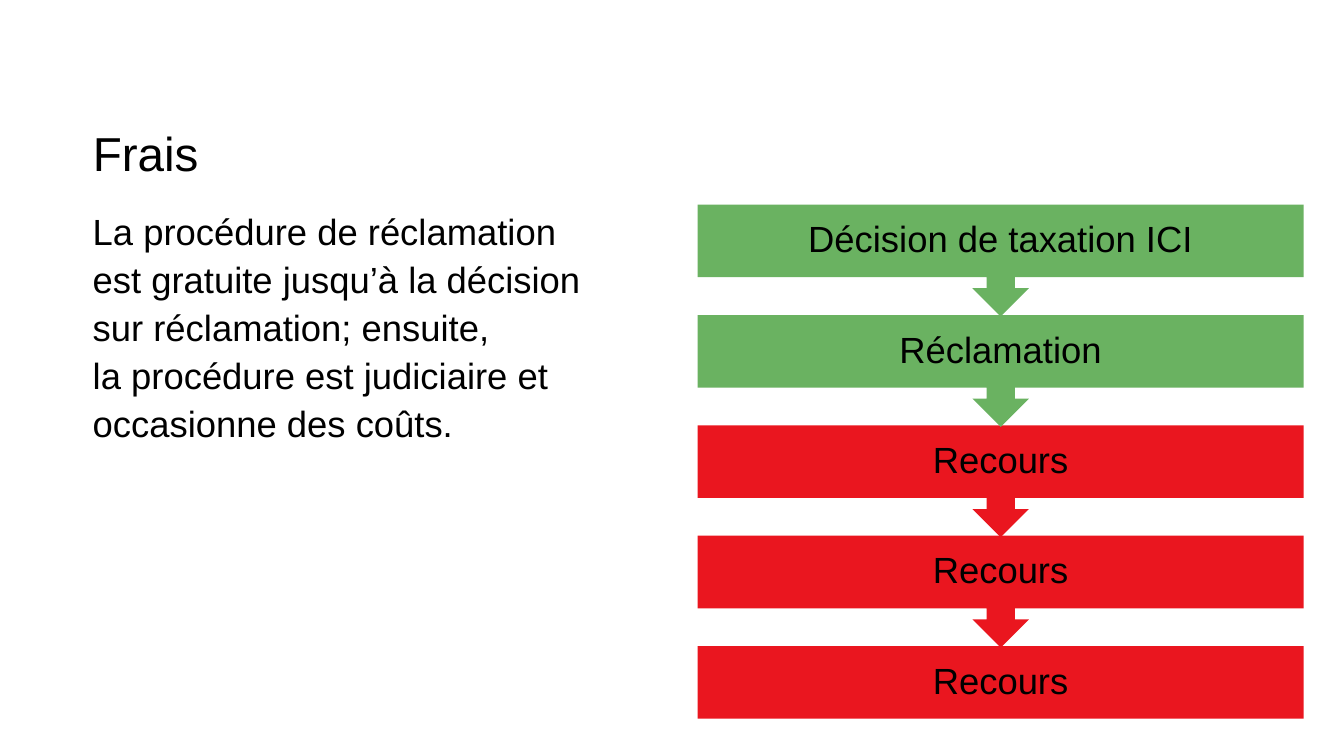
from pptx import Presentation
from pptx.dml.color import RGBColor
from pptx.enum.shapes import MSO_SHAPE
from pptx.enum.text import MSO_ANCHOR, PP_ALIGN
from pptx.util import Inches, Pt

RECTANGLE = MSO_SHAPE.RECTANGLE
TOP, MIDDLE = MSO_ANCHOR.TOP, MSO_ANCHOR.MIDDLE
LEFT, CENTER = PP_ALIGN.LEFT, PP_ALIGN.CENTER

COLORS = {"text": "000000", "free": "6AB261", "charged": "EA161F"}
FONT = "Arial"

STEPS = [
    ("Décision de taxation ICI", "free"),
    ("Réclamation", "free"),
    ("Recours", "charged"),
    ("Recours", "charged"),
    ("Recours", "charged"),
]
STEP_LEFT, STEP_WIDTH, BAR_HEIGHT = 6.92, 6.01, 0.72
FIRST_TOP, LAST_TOP = 2.03, 6.41
PITCH = (LAST_TOP - FIRST_TOP) / (len(STEPS) - 1)
ARROW_HEIGHT, NECK_HEIGHT = 0.39, 0.11
NECK_HALF, HEAD_HALF = 0.14, 0.28
STEP_INSET = 0.2


def write_text(shape, text, size, align, anchor, line_spacing, insets):
    """Fill the shape with one paragraph; insets are left, top, right, bottom."""
    frame = shape.text_frame
    frame.word_wrap = True
    frame.vertical_anchor = anchor
    (frame.margin_left, frame.margin_top,
     frame.margin_right, frame.margin_bottom) = map(Inches, insets)
    paragraph = frame.paragraphs[0]
    paragraph.text = text
    paragraph.alignment = align
    paragraph.line_spacing = line_spacing
    for run in paragraph.runs:
        run.font.name = FONT
        run.font.size = Pt(size)
        run.font.color.rgb = RGBColor.from_string(COLORS["text"])


def add_text(slide, box, text, size, anchor, line_spacing):
    shape = slide.shapes.add_textbox(*map(Inches, box))
    write_text(shape, text, size, LEFT, anchor, line_spacing, (0, 0, 0, 0))


def build_arrow_bar(slide, top):
    """Draw a bar with a downward arrow under its middle."""
    right = STEP_LEFT + STEP_WIDTH
    center = STEP_LEFT + STEP_WIDTH / 2
    bottom = top + BAR_HEIGHT
    shoulder = bottom + NECK_HEIGHT
    outline = [
        (STEP_LEFT, top), (right, top), (right, bottom),
        (center + NECK_HALF, bottom), (center + NECK_HALF, shoulder),
        (center + HEAD_HALF, shoulder), (center, bottom + ARROW_HEIGHT),
        (center - HEAD_HALF, shoulder), (center - NECK_HALF, shoulder),
        (center - NECK_HALF, bottom), (STEP_LEFT, bottom),
    ]
    points = [(Inches(x), Inches(y)) for x, y in outline]
    builder = slide.shapes.build_freeform(*points[0])
    builder.add_line_segments(points[1:], close=True)
    return builder.convert_to_shape()


def add_step(slide, index):
    label, color = STEPS[index]
    top = FIRST_TOP + index * PITCH
    bottom_inset = STEP_INSET
    if index == len(STEPS) - 1:
        shape = slide.shapes.add_shape(
            RECTANGLE, Inches(STEP_LEFT), Inches(top),
            Inches(STEP_WIDTH), Inches(BAR_HEIGHT))
    else:
        shape = build_arrow_bar(slide, top)
        bottom_inset += ARROW_HEIGHT
    shape.shadow.inherit = False
    shape.fill.solid()
    shape.fill.fore_color.rgb = RGBColor.from_string(COLORS[color])
    shape.line.fill.background()
    write_text(shape, label, 26, CENTER, MIDDLE, 0.9,
               (STEP_INSET, STEP_INSET, STEP_INSET, bottom_inset))


def main():
    presentation = Presentation()
    presentation.slide_width = Inches(13.33)
    presentation.slide_height = Inches(7.5)
    slide = presentation.slides.add_slide(presentation.slide_layouts[6])
    add_text(slide, (0.92, 1.17, 12.01, 0.68), "Frais", 34, MIDDLE, 1.0)
    add_text(slide, (0.92, 2.03, 5.83, 5.11),
             "La procédure de réclamation\v"
             "est gratuite jusqu’à la décision\v"
             "sur réclamation; ensuite,\v"
             "la procédure est judiciaire et occasionne des coûts.",
             26, TOP, 1.1)
    for index in reversed(range(len(STEPS))):
        add_step(slide, index)
    presentation.save("out.pptx")


if __name__ == "__main__":
    main()
